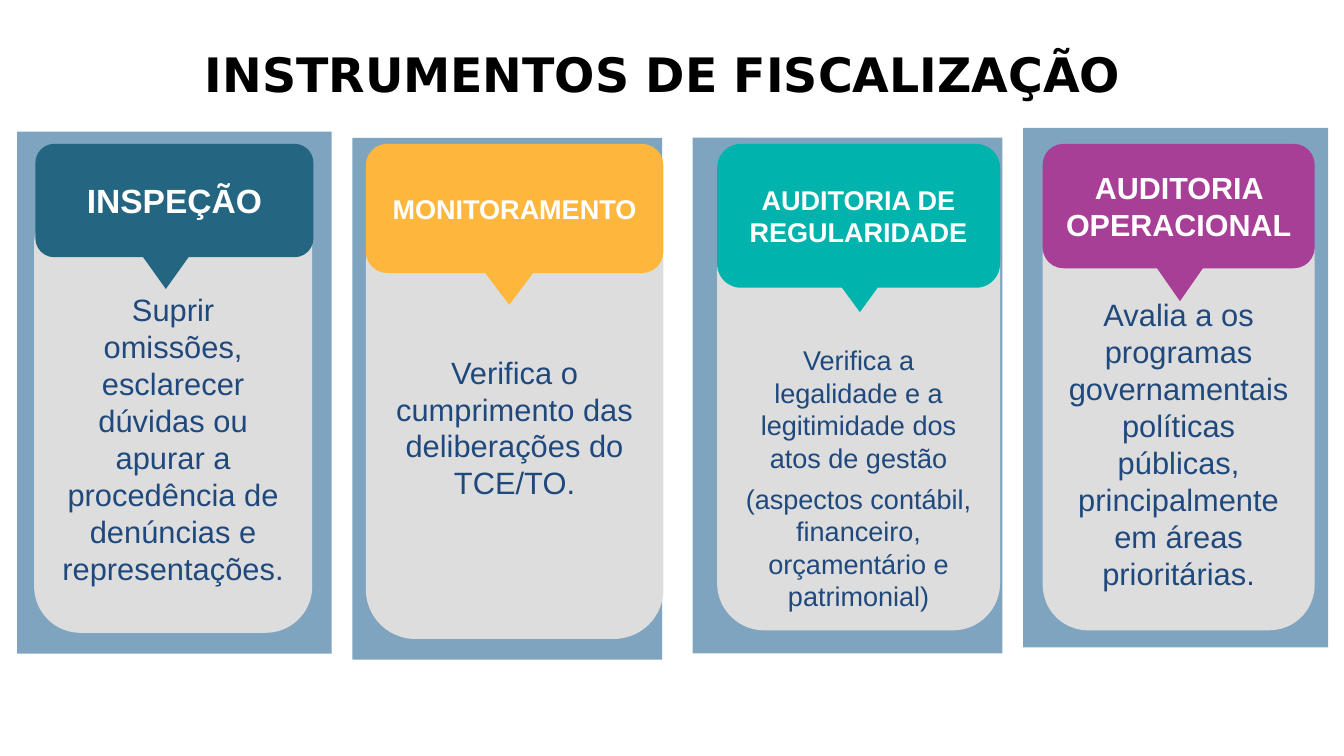
"""Builds the slide on inspection instruments with four cards."""
from lxml import etree
from pptx import Presentation
from pptx.dml.color import RGBColor
from pptx.enum.shapes import MSO_SHAPE
from pptx.enum.text import MSO_ANCHOR, PP_ALIGN
from pptx.oxml.ns import qn
from pptx.util import Inches, Pt

RECT, ROUND = MSO_SHAPE.RECTANGLE, MSO_SHAPE.ROUNDED_RECTANGLE
TRI = MSO_SHAPE.ISOSCELES_TRIANGLE
TOP, MID = MSO_ANCHOR.TOP, MSO_ANCHOR.MIDDLE
LEFT, CENTER = PP_ALIGN.LEFT, PP_ALIGN.CENTER

HEX = {"back": "014B81", "panel": "DDDDDD", "body": "1F497D", "white": "FFFFFF",
       "black": "000000", "blue": "246581", "gold": "FFB63C", "teal": "00B3AC",
       "plum": "A73F97"}
TITLE = "INSTRUMENTOS DE FISCALIZAÇÃO"
CARDS = [
    {"head": "INSPEÇÃO", "hue": "blue", "size": 19.8, "text_size": 18.2, "text_top": 2.39,
     "text": ["Suprir omissões, esclarecer dúvidas ou apurar a procedência de "
              "denúncias e representações."],
     "back": (0.14, 1.08, 2.58, 4.28), "panel": (0.28, 1.62, 2.28, 3.57),
     "tab": (0.29, 1.18, 2.28, 0.93), "tip": (1.16, 2.09, 0.4, 0.28)},
    {"head": "MONITORAMENTO", "hue": "gold", "size": 16, "text_size": 18.2, "text_top": 2.9,
     "text": ["Verifica o cumprimento das deliberações do TCE/TO."],
     "back": (2.89, 1.13, 2.54, 4.28), "panel": (3, 1.75, 2.44, 3.49),
     "tab": (3, 1.18, 2.44, 1.06), "tip": (3.98, 2.24, 0.39, 0.26)},
    {"head": "AUDITORIA DE REGULARIDADE", "hue": "teal", "size": 16, "text_size": 16,
     "text_top": 2.82,
     "text": ["Verifica a legalidade e a legitimidade dos atos de gestão",
              "(aspectos contábil, financeiro, orçamentário e patrimonial)"],
     "back": (5.68, 1.13, 2.54, 4.23), "panel": (5.88, 1.74, 2.32, 3.43),
     "tab": (5.88, 1.18, 2.32, 1.18), "tip": (6.86, 2.3, 0.38, 0.26)},
    {"head": "AUDITORIA OPERACIONAL", "hue": "plum", "size": 18, "text_size": 18.2,
     "text_top": 2.43,
     "text": ["Avalia a os programas governamentais políticas públicas, "
              "principalmente em áreas prioritárias."],
     "back": (8.39, 1.05, 2.5, 4.26), "panel": (8.55, 1.71, 2.23, 3.46),
     "tab": (8.55, 1.18, 2.23, 1.02), "tip": (9.48, 2.19, 0.39, 0.28)},
]


def color(name):
    return RGBColor.from_string(HEX[name])


def add(slide, kind, box, hue):
    shape = slide.shapes.add_shape(kind, *map(Inches, box))
    shape.shadow.inherit = False
    shape.fill.solid()
    shape.fill.fore_color.rgb = color(hue)
    shape.line.fill.background()
    return shape


def write(shape, lines, hue, anchor=MID, align=CENTER, **font):
    frame = shape.text_frame
    frame.text = "\n".join(lines)
    frame.word_wrap = True
    frame.vertical_anchor = anchor
    for num, para in enumerate(frame.paragraphs):
        para.alignment = align
        para.space_before = Pt(5 if num else 0)
        for run in para.runs:
            run.font.color.rgb = color(hue)
            for key, value in font.items():
                setattr(run.font, key, value)
    return frame


def add_card(slide, card):
    back = add(slide, RECT, card["back"], "back")
    tint = back.fill._xPr.find(qn("a:solidFill"))[0]
    etree.SubElement(tint, qn("a:alpha"), val="50000")

    box = card["panel"]
    panel = add(slide, ROUND, box, "panel")
    frame = write(panel, card["text"], "body", TOP, name="Arial",
                  size=Pt(card["text_size"]), bold=False)
    curve = 0.05 * min(box[2:])
    frame.margin_top = Inches(card["text_top"] - box[1] - curve)

    tab = add(slide, ROUND, card["tab"], card["hue"])
    write(tab, [card["head"]], "white", name="Arial", size=Pt(card["size"]), bold=True)
    add(slide, TRI, card["tip"], card["hue"]).rotation = 180


def main():
    deck = Presentation()
    deck.slide_width, deck.slide_height = Inches(11.02), Inches(6.2)
    slide = deck.slides.add_slide(deck.slide_layouts[5])
    title = slide.shapes.title
    spots = {"left": 1.68, "top": 0.3, "width": 8.8, "height": 0.6}
    for key, value in spots.items():
        setattr(title, key, Inches(value))
    frame = write(title, [TITLE], "black", align=LEFT, name="DejaVu Sans",
                  size=Pt(28), bold=True)
    for side in ("left", "top", "right", "bottom"):
        setattr(frame, "margin_" + side, 0)
    for card in CARDS:
        add_card(slide, card)
    deck.save("out.pptx")


if __name__ == "__main__":
    main()
